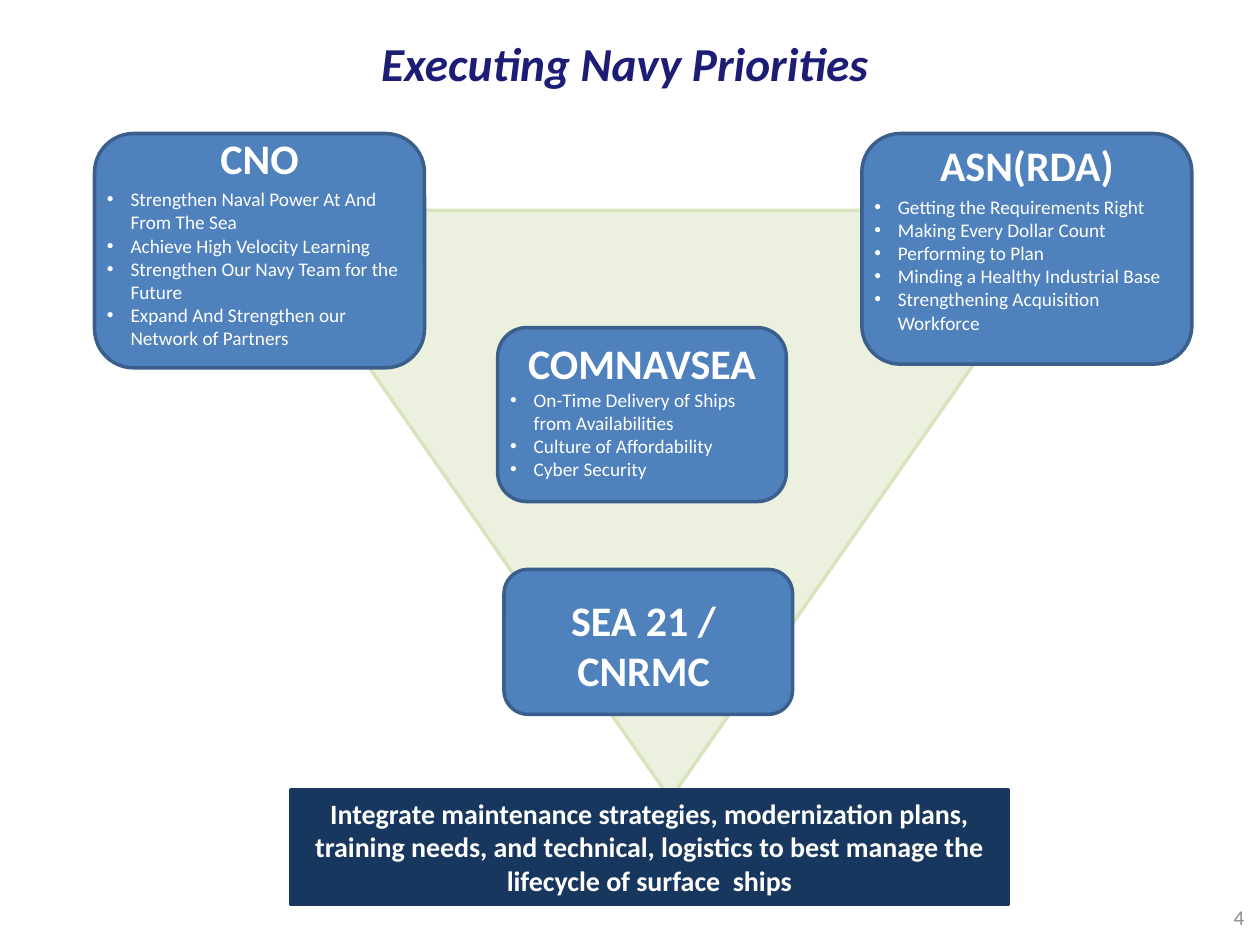
from lxml import etree
from pptx import Presentation
from pptx.dml.color import RGBColor
from pptx.enum.shapes import MSO_SHAPE
from pptx.enum.text import MSO_ANCHOR, PP_ALIGN
from pptx.oxml.ns import qn
from pptx.util import Pt

FONT = "Calibri"
WHITE = RGBColor(0xFF, 0xFF, 0xFF)
TITLE_NAVY = RGBColor(0x1D, 0x1D, 0x75)
CARD_BLUE = RGBColor(0x4F, 0x81, 0xBD)
CARD_EDGE = RGBColor(0x3A, 0x5F, 0x8C)
PALE_GREEN = RGBColor(0xEB, 0xF1, 0xDE)
GREEN_EDGE = RGBColor(0xD7, 0xE4, 0xBD)
BANNER_NAVY = RGBColor(0x17, 0x37, 0x5E)
GREY = RGBColor(0x8C, 0x8C, 0x8C)

TRIANGLE = MSO_SHAPE.ISOSCELES_TRIANGLE
ROUNDED = MSO_SHAPE.ROUNDED_RECTANGLE
RECTANGLE = MSO_SHAPE.RECTANGLE
LEFT, CENTER, RIGHT = PP_ALIGN.LEFT, PP_ALIGN.CENTER, PP_ALIGN.RIGHT
TOP, MIDDLE = MSO_ANCHOR.TOP, MSO_ANCHOR.MIDDLE

HEADING_SIZE, BULLET_SIZE = 24, 11
BULLET_INDENT = Pt(13.5)

# Card box, then (box, heading, bullets) for each of its texts
CARDS = [
    ((284.4, 187.2, 164.9, 99.4), [
        ((284.4, 189.4, 164.9, 90), "COMNAVSEA", [
            "On-Time Delivery of Ships from Availabilities",
            "Culture of Affordability",
            "Cyber Security"])]),
    ((288, 325.4, 164.9, 82.8), [
        ((288, 336.2, 164.9, 65.5), "SEA 21 / \vCNRMC ", [])]),
    ((54, 76.3, 188.6, 133.9), [
        ((54, 72, 188.6, 38.2), "CNO", []),
        ((54, 103.7, 186.5, 105.1), None, [
            "Strengthen Naval Power At And From The Sea",
            "Achieve High Velocity Learning",
            "Strengthen Our Navy Team for the Future",
            "Expand And Strengthen our Network of Partners"])]),
    ((492.5, 76.3, 188.6, 131.8), [
        ((492.5, 76.3, 188.6, 31.7), "ASN(RDA)", []),
        ((492.5, 108, 188.6, 87.1), None, [
            "Getting the Requirements Right",
            "Making Every Dollar Count",
            "Performing to Plan",
            "Minding a Healthy Industrial Base",
            "Strengthening Acquisition Workforce"])]),
]


def points(box):
    return [Pt(length) for length in box]


def add_panel(slide, preset, box, fill, edge, edge_width=2):
    panel = slide.shapes.add_shape(preset, *points(box))
    panel.shadow.inherit = False
    panel.fill.solid()
    panel.fill.fore_color.rgb = fill
    panel.line.color.rgb = edge
    panel.line.width = Pt(edge_width)
    return panel


def add_text_frame(slide, box, anchor=TOP):
    frame = slide.shapes.add_textbox(*points(box)).text_frame
    frame.word_wrap = True
    frame.vertical_anchor = anchor
    return frame


def write(paragraph, text, size, color=WHITE, align=CENTER, bold=False, italic=False):
    paragraph.text = text
    paragraph.alignment = align
    for run in paragraph.runs:
        font = run.font
        font.name, font.size = FONT, Pt(size)
        font.bold, font.italic = bold, italic
        font.color.rgb = color


def write_bullet(paragraph, text):
    properties = paragraph._p.get_or_add_pPr()
    properties.set("marL", str(BULLET_INDENT))
    properties.set("indent", str(-BULLET_INDENT))
    etree.SubElement(properties, qn("a:buFont")).set("typeface", "Arial")
    etree.SubElement(properties, qn("a:buChar")).set("char", "•")
    write(paragraph, text, BULLET_SIZE, align=LEFT)


def add_card(slide, box, texts):
    add_panel(slide, ROUNDED, box, CARD_BLUE, CARD_EDGE)
    for text_box, heading, bullets in texts:
        frame = add_text_frame(slide, text_box)
        paragraph_count = len(bullets) + (heading is not None)
        for _ in range(paragraph_count - 1):
            frame.add_paragraph()
        paragraphs = iter(frame.paragraphs)
        if heading:
            write(next(paragraphs), heading, HEADING_SIZE, bold=True)
        for paragraph, bullet in zip(paragraphs, bullets):
            write_bullet(paragraph, bullet)


def main():
    deck = Presentation()
    deck.slide_width, deck.slide_height = Pt(720), Pt(540)
    slide = deck.slides.add_slide(deck.slide_layouts[6])

    # Downward triangle behind the cards
    triangle = add_panel(slide, TRIANGLE, (148.3, 120.2, 469.4, 336.2),
                         PALE_GREEN, GREEN_EDGE)
    triangle.rotation = 180

    # Title
    title = add_text_frame(slide, (36, 0, 648, 72), MIDDLE)
    write(title.paragraphs[0], "Executing Navy Priorities ", 27, TITLE_NAVY,
          bold=True, italic=True)

    # Organisation cards
    for box, texts in CARDS:
        add_card(slide, box, texts)

    # Closing banner
    banner = add_panel(slide, RECTANGLE, (166.3, 451.4, 409.7, 65.5),
                       BANNER_NAVY, BANNER_NAVY, 2.25).text_frame
    banner.word_wrap = True
    banner.vertical_anchor = TOP
    write(banner.paragraphs[0],
          "Integrate maintenance strategies, modernization plans, training needs, "
          "and technical, logistics to best manage the lifecycle of surface  ships",
          16, bold=True)

    # Page number
    page_number = add_text_frame(slide, (550, 509.8, 168, 28.8), MIDDLE)
    write(page_number.paragraphs[0], "4", 12, GREY, RIGHT)

    deck.save("out.pptx")


if __name__ == "__main__":
    main()
